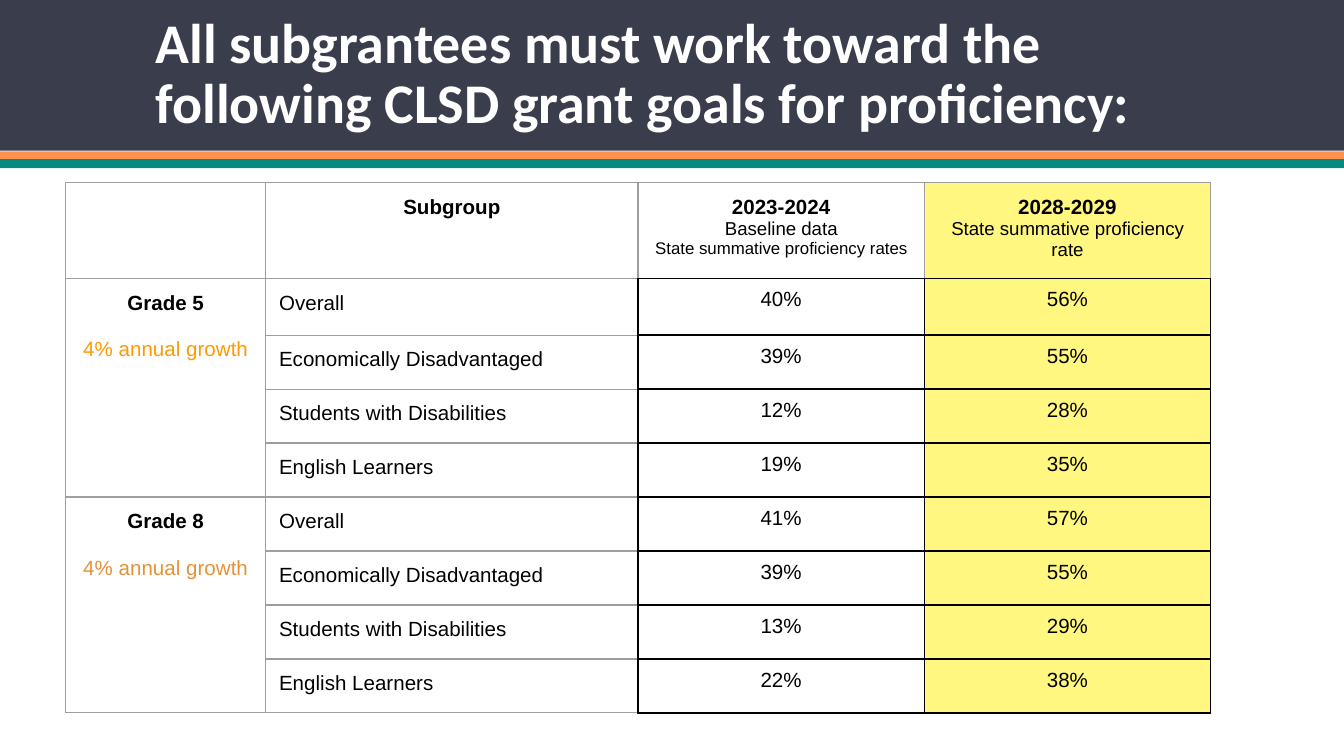
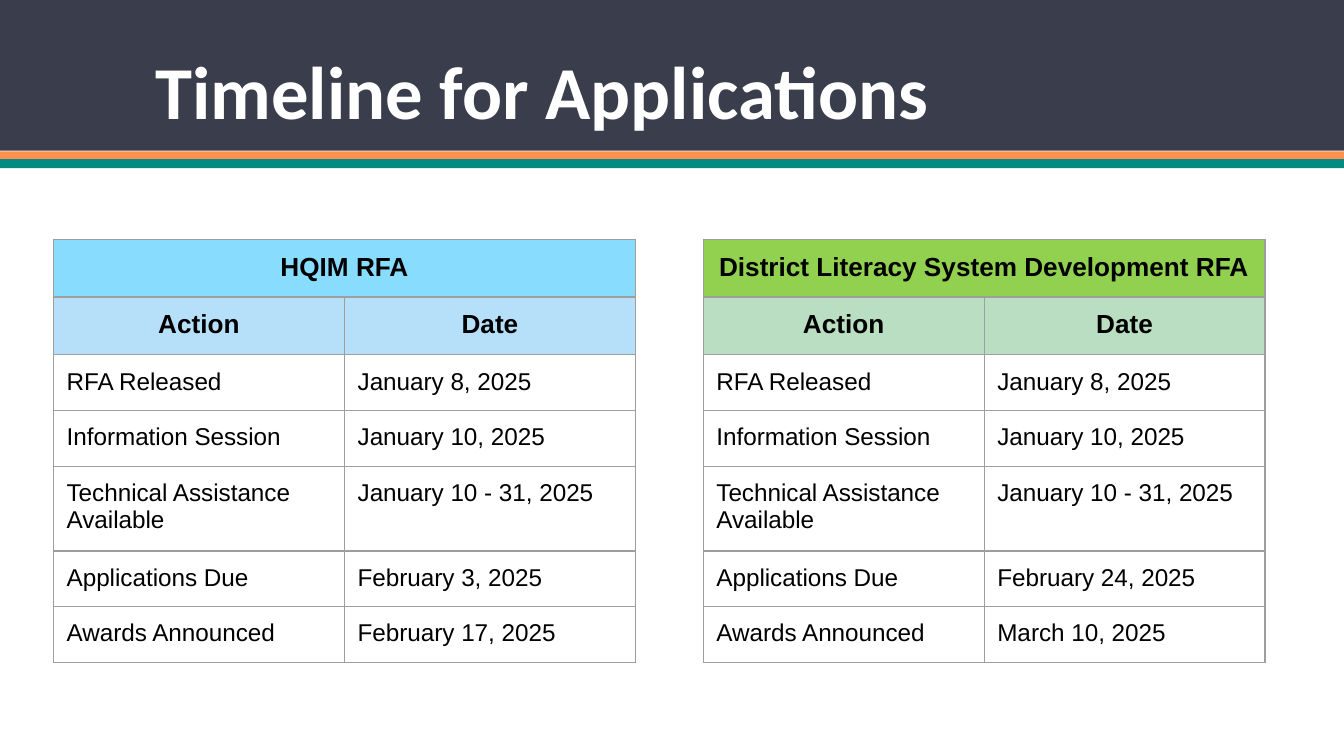
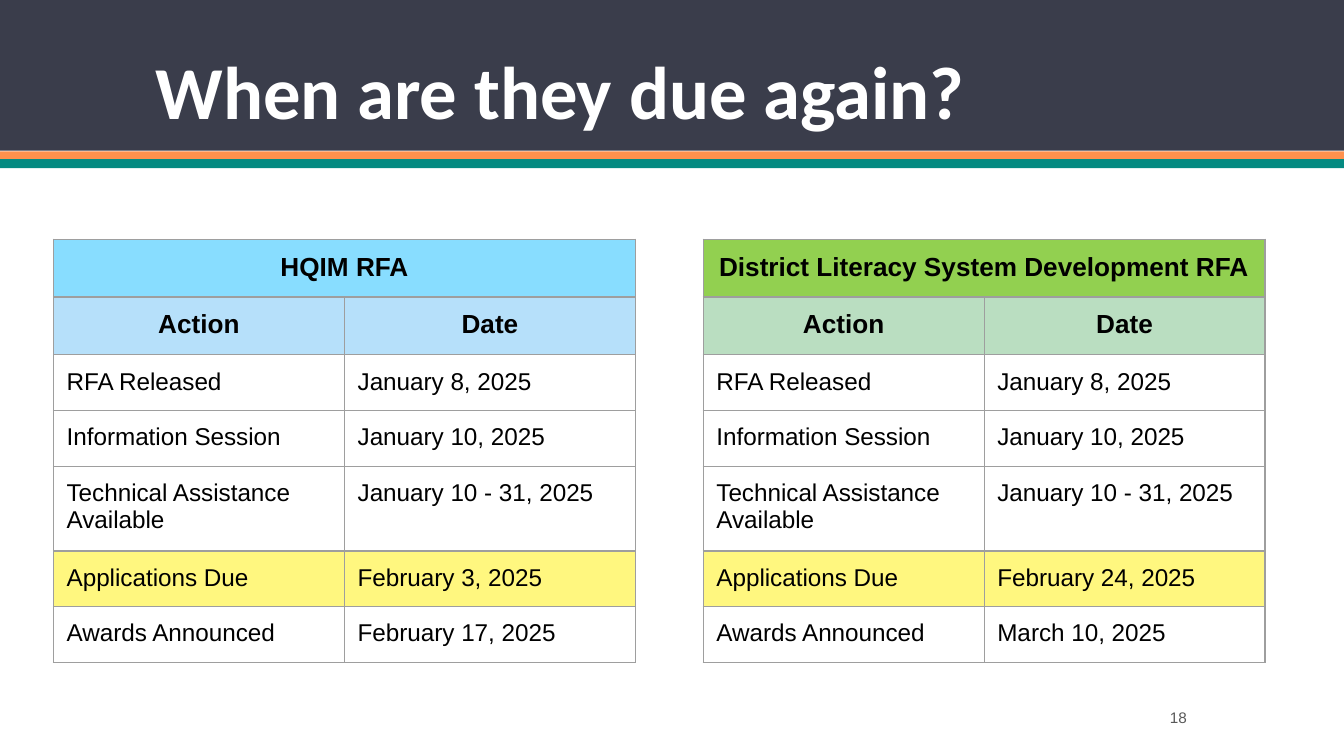
from collections import namedtuple

from lxml import etree
from pptx import Presentation
from pptx.dml.color import RGBColor
from pptx.enum.shapes import MSO_SHAPE
from pptx.enum.text import MSO_ANCHOR, PP_ALIGN
from pptx.oxml.ns import qn
from pptx.util import Cm, Pt

RECTANGLE = MSO_SHAPE.RECTANGLE
LEFT, CENTER, RIGHT = PP_ALIGN.LEFT, PP_ALIGN.CENTER, PP_ALIGN.RIGHT
MIDDLE, BOTTOM = MSO_ANCHOR.MIDDLE, MSO_ANCHOR.BOTTOM

WHITE = RGBColor(0xFF, 0xFF, 0xFF)
BLACK = RGBColor(0x00, 0x00, 0x00)
NAVY = RGBColor(0x3A, 0x3D, 0x4B)
ORANGE = RGBColor(0xFF, 0x91, 0x4D)
TEAL = RGBColor(0x04, 0x8A, 0x81)
GRID_GRAY = RGBColor(0x9E, 0x9E, 0x9E)
NUMBER_GRAY = RGBColor(0x59, 0x59, 0x59)
YELLOW = RGBColor(0xFF, 0xF7, 0x7F)
GROWTH_AMBER = RGBColor(0xFF, 0x99, 0x00)
GROWTH_OCHRE = RGBColor(0xE6, 0x91, 0x38)
SKY = RGBColor(0x88, 0xDD, 0xFF)
PALE_SKY = RGBColor(0xB6, 0xE0, 0xFA)
GREEN = RGBColor(0x92, 0xD0, 0x50)
PALE_GREEN = RGBColor(0xBA, 0xDE, 0xC1)

TITLE_FONT, BODY_FONT = "Calibri", "Arial"
SLIDE_WIDTH, SLIDE_HEIGHT = Cm(25.4), Cm(14.29)
BANDS = [(0, 2.85, NAVY), (2.86, 0.17, ORANGE), (3.01, 0.17, TEAL)]
WIDE_MARGIN, NARROW_MARGIN = Cm(0.25), Cm(0.18)

Box = namedtuple("Box", "left top width height")
Line = namedtuple("Line", "text size bold color before", defaults=(False, BLACK, 0))

TITLE_BOX = Box(Cm(2.69), Cm(0.53), Cm(20.02), Cm(2.16))
NUMBER_BOX = Box(Cm(19.84), Cm(13.28), Cm(2.84), Cm(0.58))
GOALS_BOX = Box(Cm(1.24), Cm(3.45), Cm(21.64), Cm(9.98))
HQIM_BOX = Box(Cm(1.01), Cm(4.52), Cm(11), Cm(7.2))
DISTRICT_BOX = Box(Cm(13.29), Cm(4.52), Cm(10.62), Cm(7.2))

GRAY_EDGE, BLACK_EDGE = (GRID_GRAY, 0.75), (BLACK, 1)
GRAY_EDGES = dict.fromkeys("LRTB", GRAY_EDGE)
BLACK_EDGES = dict.fromkeys("LRTB", BLACK_EDGE)

SUBGROUPS = ["Overall", "Economically Disadvantaged", "Students with Disabilities", "English Learners"]
GRADES = [
    ("Grade 5", GROWTH_AMBER, [("40%", "56%"), ("39%", "55%"), ("12%", "28%"), ("19%", "35%")]),
    ("Grade 8", GROWTH_OCHRE, [("41%", "57%"), ("39%", "55%"), ("13%", "29%"), ("22%", "38%")]),
]
RATE_LABEL = "State summative proficiency rate"

DUE_ACTION = "Applications Due"
ACTIONS = ["RFA Released", "Information Session", "Technical Assistance Available", DUE_ACTION, "Awards Announced"]
SHARED_DATES = ["January 8, 2025", "January 10, 2025", "January 10 - 31, 2025"]
TIMELINES = [
    (HQIM_BOX, "HQIM RFA", SKY, PALE_SKY, SHARED_DATES + ["February 3, 2025", "February 17, 2025"]),
    (DISTRICT_BOX, "District Literacy System Development RFA", GREEN, PALE_GREEN,
     SHARED_DATES + ["February 24, 2025", "March 10, 2025"]),
]


def write_lines(frame, lines, align, font_name=BODY_FONT):
    frame.text = "\n".join(line.text for line in lines)
    for para, line in zip(frame.paragraphs, lines):
        para.alignment = align
        if line.before:
            para.space_before = Pt(line.before)
        for span in para.runs:
            span.font.name = font_name
            span.font.size = Pt(line.size)
            span.font.bold = line.bold
            span.font.color.rgb = line.color


def add_text(page, box, line, align, anchor, font_name=BODY_FONT):
    frame = page.shapes.add_textbox(*box).text_frame
    frame.word_wrap = True
    frame.vertical_anchor = anchor
    write_lines(frame, [line], align, font_name)
    return frame


def add_page(deck, title, title_size):
    page = deck.slides.add_slide(deck.slide_layouts[6])
    for top, height, color in BANDS:
        band = page.shapes.add_shape(RECTANGLE, 0, Cm(top), SLIDE_WIDTH, Cm(height))
        band.shadow.inherit = False
        band.fill.solid()
        band.fill.fore_color.rgb = color
        band.line.fill.background()
    frame = add_text(page, TITLE_BOX, Line(title, title_size, True, WHITE), LEFT, BOTTOM, TITLE_FONT)
    frame.paragraphs[0].line_spacing = 0.9
    return page


def add_grid(page, box, column_shares, row_heights):
    grid = page.shapes.add_table(len(row_heights), len(column_shares), *box).table
    grid.first_row = grid.horz_banding = False
    for column, share in zip(grid.columns, column_shares):
        column.width = int(box.width * share / sum(column_shares))
    for row, height in zip(grid.rows, row_heights):
        row.height = Cm(height)
    return grid


def style_cell(cell, edges, fill=None):
    properties = cell._tc.get_or_add_tcPr()
    for side in "LRTB":
        color, width = edges[side]
        edge = etree.SubElement(properties, qn("a:ln" + side), w=str(Pt(width)))
        solid = etree.SubElement(edge, qn("a:solidFill"))
        etree.SubElement(solid, qn("a:srgbClr"), val=str(color))
    if fill is None:
        cell.fill.background()
    else:
        cell.fill.solid()
        cell.fill.fore_color.rgb = fill


def fill_cell(cell, lines, align, edges, fill=None, margin=WIDE_MARGIN):
    style_cell(cell, edges, fill)
    cell.margin_left = cell.margin_right = cell.margin_top = cell.margin_bottom = margin
    write_lines(cell.text_frame, lines, align)


def add_goals_table(page, box):
    grid = add_grid(page, box, [1.49, 2.77, 2.13, 2.13], [1.77, 1.07] + [1.02] * 7)
    above_rates = {**GRAY_EDGES, "B": BLACK_EDGE}
    beside_rates = {**GRAY_EDGES, "R": BLACK_EDGE}
    style_cell(grid.cell(0, 0), GRAY_EDGES)
    fill_cell(grid.cell(0, 1), [Line("Subgroup", 11, True)], CENTER, GRAY_EDGES)
    baseline = [Line("2023-2024", 11, True), Line("Baseline data", 10), Line(RATE_LABEL + "s", 9)]
    fill_cell(grid.cell(0, 2), baseline, CENTER, above_rates)
    target = [Line("2028-2029", 11, True), Line(RATE_LABEL, 10)]
    fill_cell(grid.cell(0, 3), target, CENTER, above_rates, YELLOW)

    for index, (grade, growth_color, rates) in enumerate(GRADES):
        first = 1 + index * len(SUBGROUPS)
        last = first + len(SUBGROUPS) - 1
        grid.cell(first, 0).merge(grid.cell(last, 0))
        growth = Line("4% annual growth", 11, False, growth_color, 12.5)
        fill_cell(grid.cell(first, 0), [Line(grade, 11, True), growth], CENTER, GRAY_EDGES)
        for row in range(first + 1, last + 1):
            style_cell(grid.cell(row, 0), GRAY_EDGES)
        for row, (subgroup, pair) in enumerate(zip(SUBGROUPS, rates), first):
            fill_cell(grid.cell(row, 1), [Line(subgroup, 11)], LEFT, beside_rates)
            for column, (rate, fill) in enumerate(zip(pair, (None, YELLOW)), 2):
                fill_cell(grid.cell(row, column), [Line(rate, 11)], CENTER, BLACK_EDGES, fill, NARROW_MARGIN)


def add_timeline_table(page, box, heading, heading_fill, label_fill, dates, due_fill):
    grid = add_grid(page, box, [1, 1], [1.05] * 2 + [1.02] * len(ACTIONS))
    grid.cell(0, 0).merge(grid.cell(0, 1))
    fill_cell(grid.cell(0, 0), [Line(heading, 14, True)], CENTER, GRAY_EDGES, heading_fill)
    style_cell(grid.cell(0, 1), GRAY_EDGES, heading_fill)
    for column, label in enumerate(["Action", "Date"]):
        fill_cell(grid.cell(1, column), [Line(label, 14, True)], CENTER, GRAY_EDGES, label_fill)
    for row, entry in enumerate(zip(ACTIONS, dates), 2):
        fill = due_fill if entry[0] == DUE_ACTION else None
        for column, text in enumerate(entry):
            fill_cell(grid.cell(row, column), [Line(text, 13)], LEFT, GRAY_EDGES, fill)


def add_goals_page(deck):
    title = "All subgrantees must work toward the following CLSD grant goals for proficiency:"
    add_goals_table(add_page(deck, title, 30), GOALS_BOX)


def add_timeline_page(deck, title, due_fill=None, number=None):
    page = add_page(deck, title, 40)
    if number:
        add_text(page, NUMBER_BOX, Line(number, 8.2, False, NUMBER_GRAY), RIGHT, MIDDLE)
    for timeline in TIMELINES:
        add_timeline_table(page, *timeline, due_fill)


def main():
    deck = Presentation()
    deck.slide_width, deck.slide_height = SLIDE_WIDTH, SLIDE_HEIGHT
    add_goals_page(deck)
    add_timeline_page(deck, "Timeline for Applications")
    add_timeline_page(deck, "When are they due again?", YELLOW, "18")
    deck.save("out.pptx")


if __name__ == "__main__":
    main()
